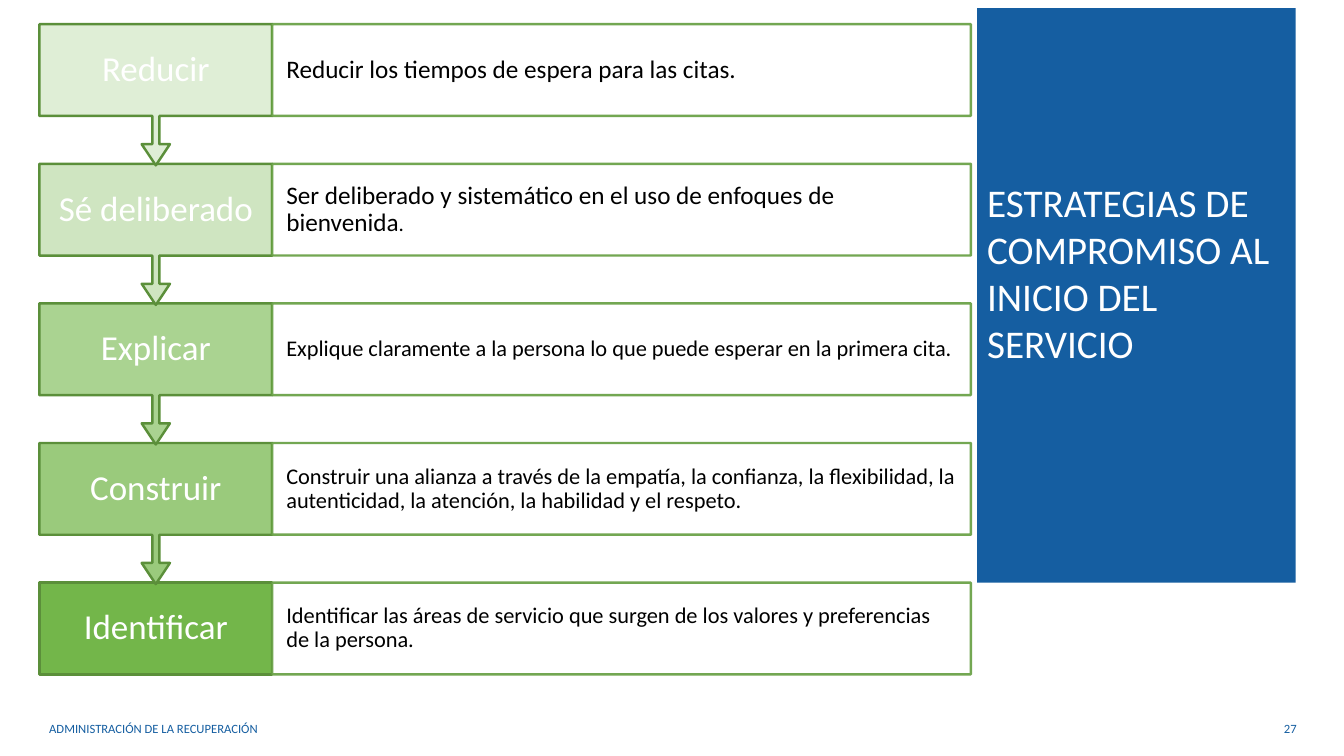
from lxml import etree
from pptx import Presentation
from pptx.dml.color import RGBColor
from pptx.enum.shapes import MSO_SHAPE
from pptx.enum.text import MSO_ANCHOR, MSO_AUTO_SIZE, PP_ALIGN
from pptx.oxml.ns import qn
from pptx.util import Inches, Pt

RECT, CALLOUT = MSO_SHAPE.RECTANGLE, MSO_SHAPE.UP_ARROW_CALLOUT
LEFT, CENTER, RIGHT = PP_ALIGN.LEFT, PP_ALIGN.CENTER, PP_ALIGN.RIGHT
MIDDLE, NO_FIT = MSO_ANCHOR.MIDDLE, MSO_AUTO_SIZE.NONE

BLUE, WHITE, BLACK = "155EA1", "FFFFFF", "000000"
STEP_LINE, DETAIL_LINE = "5B8F3A", "649E40"
STEP_X, STEP_W, STEP_H, CALLOUT_H = 0.39, 2.31, 0.91, 1.4
DETAIL_X, DETAIL_W = STEP_X + STEP_W, 6.93
FIRST_Y, LAST_Y = 0.24, 5.78

STEPS = [
    ("Reducir", "DFEED6", [("Reducir los tiempos de espera para las citas.", 18)]),
    ("Sé deliberado", "CFE5C1",
     [("Ser deliberado y sistemático en el uso de enfoques de bienvenida", 18), (".", 15)]),
    ("Explicar", "AAD391",
     [("Explique claramente a la persona lo que puede esperar en la primera cita.", 16)]),
    ("Construir", "9ACA7C",
     [("Construir una alianza a través de la empatía, la confianza, la flexibilidad, "
       "la autenticidad, la atención, la habilidad y el respeto.", 16)]),
    ("Identificar", "73B64A",
     [("Identificar las áreas de servicio que surgen de los valores y preferencias "
       "de la persona.", 16)]),
]


def rgb(value):
    """Return the colour for a hex string."""
    return RGBColor.from_string(value)


class Deck:
    """Hold the style and the current slide."""

    font = "Calibri"
    line_width = Pt(1.75)

    def __init__(self, s):
        """Keep the slide to draw on."""
        self.s = s

    def add_runs(self, sp, runs, color, align=LEFT, insets=(0.1, 0.05, 0.1, 0.05), spacing=1.0):
        """Fill a shape with one paragraph of (text, size) runs."""
        tf = sp.text_frame
        tf.word_wrap = True
        tf.auto_size = NO_FIT
        tf.vertical_anchor = MIDDLE
        (tf.margin_left, tf.margin_top,
         tf.margin_right, tf.margin_bottom) = [Inches(v) for v in insets]
        p = tf.paragraphs[0]
        p.alignment = align
        p.line_spacing = spacing
        for text, size in runs:
            r = p.add_run()
            r.text = text
            r.font.name = self.font
            r.font.size = Pt(size)
            r.font.color.rgb = rgb(color)

    def title(self, box, text, fill, size):
        """Place the title placeholder as a filled panel."""
        sp = self.s.shapes.title
        sp.left, sp.top, sp.width, sp.height = [Inches(v) for v in box]
        sp.fill.solid()
        sp.fill.fore_color.rgb = rgb(fill)
        self.add_runs(sp, [(text, size)], WHITE, insets=(0.1, 0, 0.1, 0.46))

    def shape(self, kind, box, fill, line, alpha=100):
        """Add a filled and outlined preset shape."""
        sp = self.s.shapes.add_shape(kind, *[Inches(v) for v in box])
        sp.shadow.inherit = False
        sp.fill.solid()
        sp.fill.fore_color.rgb = rgb(fill)
        sp.line.color.rgb = rgb(line)
        sp.line.width = self.line_width
        if alpha < 100:
            for clr in sp._element.spPr.iter(qn("a:srgbClr")):
                etree.SubElement(clr, qn("a:alpha"), val=str(alpha * 1000))
        return sp

    def callout(self, box, fill, line):
        """Add a box whose arrow points down to the next step."""
        sp = self.shape(CALLOUT, box, fill, line)
        sp.rotation = 180
        for i, value in enumerate((0.05, 0.1, 0.15, 0.65)):
            sp.adjustments[i] = value

    def text(self, box, text, size, color, align=LEFT, **style):
        """Add a text box."""
        sp = self.s.shapes.add_textbox(*[Inches(v) for v in box])
        self.add_runs(sp, [(text, size)], color, align, **style)

    def step(self, y, name, fill, detail, last):
        """Add one step with its name and detail."""
        if last:
            self.shape(RECT, (STEP_X, y, STEP_W, STEP_H), fill, STEP_LINE)
        else:
            self.callout((STEP_X, y, STEP_W, CALLOUT_H), fill, STEP_LINE)
        self.text((STEP_X, y, STEP_W, STEP_H), name, 25, WHITE, CENTER,
                  insets=(0.16, 0.19, 0.16, 0.19), spacing=0.9)
        sp = self.shape(RECT, (DETAIL_X, y, DETAIL_W, STEP_H), WHITE, DETAIL_LINE, alpha=90)
        self.add_runs(sp, detail, BLACK, insets=(0.14, 0.2, 0.14, 0.2), spacing=0.9)


def main():
    """Build and save the slide."""
    prs = Presentation()
    prs.slide_width, prs.slide_height = Inches(13.33), Inches(7.5)
    deck = Deck(prs.slides.add_slide(prs.slide_layouts[5]))
    deck.title((9.69, 0.08, 3.16, 5.7), "ESTRATEGIAS DE COMPROMISO AL INICIO DEL SERVICIO", BLUE, 28)
    last = len(STEPS) - 1
    pitch = (LAST_Y - FIRST_Y) / last
    for i, (name, fill, detail) in reversed(list(enumerate(STEPS))):
        deck.step(FIRST_Y + i * pitch, name, fill, detail, i == last)
    deck.text((0.39, 7.03, 7.46, 0.4), "ADMINISTRACIÓN DE LA RECUPERACIÓN", 9, BLUE)
    deck.text((11.81, 7.03, 1.15, 0.4), "27", 9, BLUE, RIGHT)
    prs.save("out.pptx")


if __name__ == "__main__":
    main()
